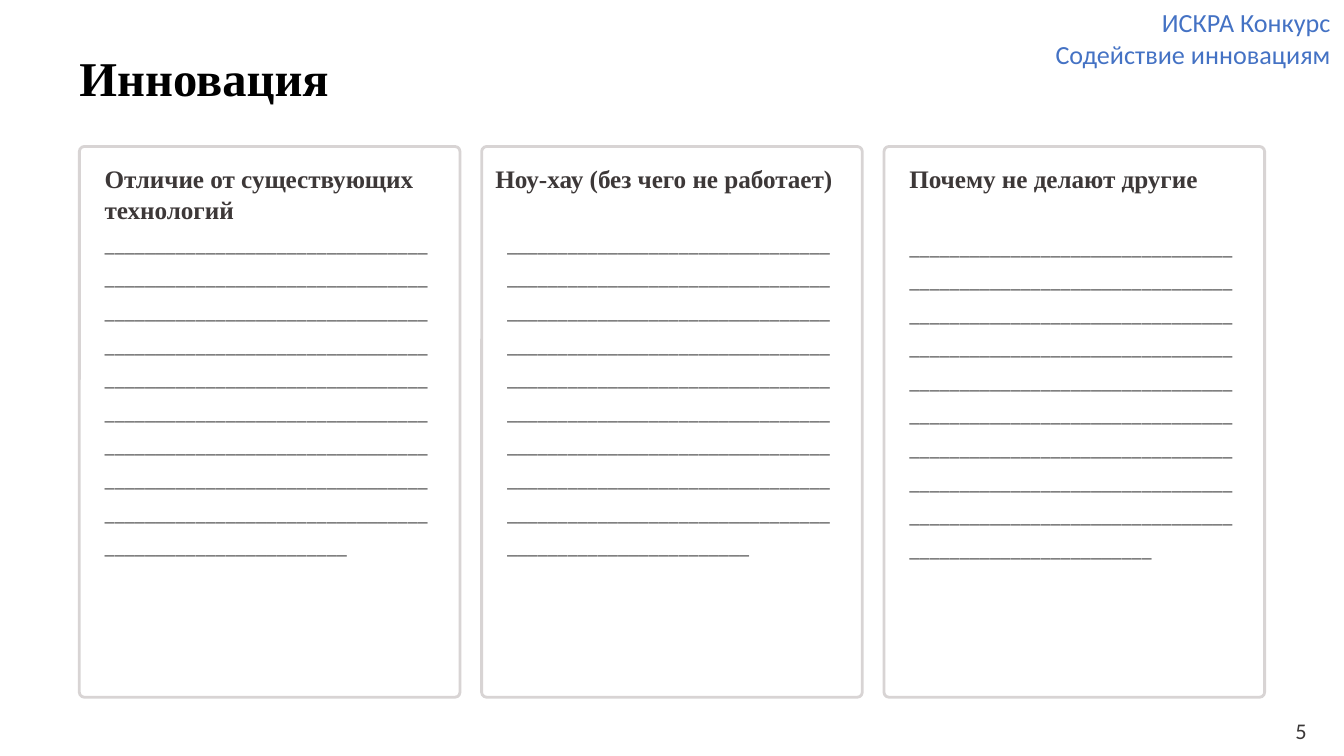
from pptx import Presentation
from pptx.dml.color import RGBColor
from pptx.enum.shapes import MSO_SHAPE as Shape
from pptx.enum.text import MSO_ANCHOR as Anchor, MSO_AUTO_SIZE as AutoSize, PP_ALIGN as Align
from pptx.util import Cm, Pt

WHITE = RGBColor(0xFF, 0xFF, 0xFF)
BLACK = RGBColor(0x00, 0x00, 0x00)
BLUE = RGBColor(0x44, 0x72, 0xC4)
DARK = RGBColor(0x3D, 0x38, 0x38)
NUMBER_DARK = RGBColor(0x3B, 0x38, 0x38)
GRAY = RGBColor(0x80, 0x80, 0x80)
BORDER = RGBColor(0xD8, 0xD4, 0xD4)

SERIF = "Times New Roman"
BLANK_LINES = "_" * 312  # wraps into nine full lines and a shorter one

# Heading, heading inset, heading width, top of the blank lines (cm)
CARDS = [
    ("Отличие от существующих технологий", 0.48, 6.22, 1.47),
    ("Ноу-хау (без чего не работает)", 0.26, 6.43, 1.47),
    ("Почему не делают другие", 0.48, 6.22, 1.52),
]


def write_text(shape, text, *, font, size, color, bold=False, align=Align.LEFT,
               spacing=None, margins=False, wrap=True):
    frame = shape.text_frame
    frame.text = text
    frame.word_wrap = wrap
    frame.auto_size = AutoSize.NONE
    frame.vertical_anchor = Anchor.TOP
    if not margins:
        frame.margin_left = frame.margin_right = 0
        frame.margin_top = frame.margin_bottom = 0
    for paragraph in frame.paragraphs:
        paragraph.alignment = align
        if spacing:
            paragraph.line_spacing = Pt(spacing)
        paragraph.font.name = font
        paragraph.font.size = Pt(size)
        paragraph.font.bold = bold
        paragraph.font.color.rgb = color


def add_text(slide, left, top, width, height, text, **text_format):
    box = slide.shapes.add_textbox(Cm(left), Cm(top), Cm(width), Cm(height))
    write_text(box, text, **text_format)


def add_header(slide, left, top, width, height):
    # Contest name in the right corner
    add_text(slide, left + width - 5.77, top, 5.77, 1.45,
             "ИСКРА Конкурс\nСодействие инновациям", font="Calibri", size=14,
             color=BLUE, align=Align.RIGHT, margins=True, wrap=False)
    # Title
    title = slide.shapes.title
    title.left, title.top = Cm(left + 1.5), Cm(top + 0.79)
    title.width, title.height = Cm(9.25), Cm(height - 0.79)
    write_text(title, "Инновация", font=SERIF, size=26, color=BLACK,
               bold=True, spacing=34.5, wrap=False)


def add_card(slide, left, top, width, height, heading, inset, heading_width, lines_top):
    # Frame
    frame = slide.shapes.add_shape(Shape.ROUNDED_RECTANGLE, Cm(left), Cm(top),
                                   Cm(width), Cm(height))
    frame.adjustments[0] = 0.013
    frame.shadow.inherit = False
    frame.fill.solid()
    frame.fill.fore_color.rgb = WHITE
    frame.line.color.rgb = BORDER
    frame.line.width = Pt(1.5)
    # Heading and blank lines to fill in
    add_text(slide, left + inset, top + 0.28, heading_width, 1.22, heading,
             font=SERIF, size=13.5, color=DARK, bold=True, spacing=17)
    add_text(slide, left + 0.48, top + lines_top, 6.22, 7.98, BLANK_LINES,
             font="Roboto", size=12, color=GRAY, spacing=18)


def add_cards(slide, left, top, width, height, gap=0.41):
    card_width = (width - gap * (len(CARDS) - 1)) / len(CARDS)
    for index, card in enumerate(CARDS):
        add_card(slide, left + index * (card_width + gap), top, card_width, height, *card)


def add_page_number(slide, left, top, width, height):
    add_text(slide, left, top, width, height, "5", font="Calibri", size=12,
             color=NUMBER_DARK, margins=True)


def main():
    presentation = Presentation()
    presentation.slide_width, presentation.slide_height = Cm(25.4), Cm(14.29)
    slide = presentation.slides.add_slide(presentation.slide_layouts[5])
    slide.background.fill.solid()
    slide.background.fill.fore_color.rgb = WHITE

    add_header(slide, 0, 0, 25.4, 1.96)
    add_cards(slide, 1.5, 2.77, 22.4, 10.41)
    add_page_number(slide, 24.23, 13.44, 1.37, 1.14)
    presentation.save("out.pptx")


if __name__ == "__main__":
    main()
